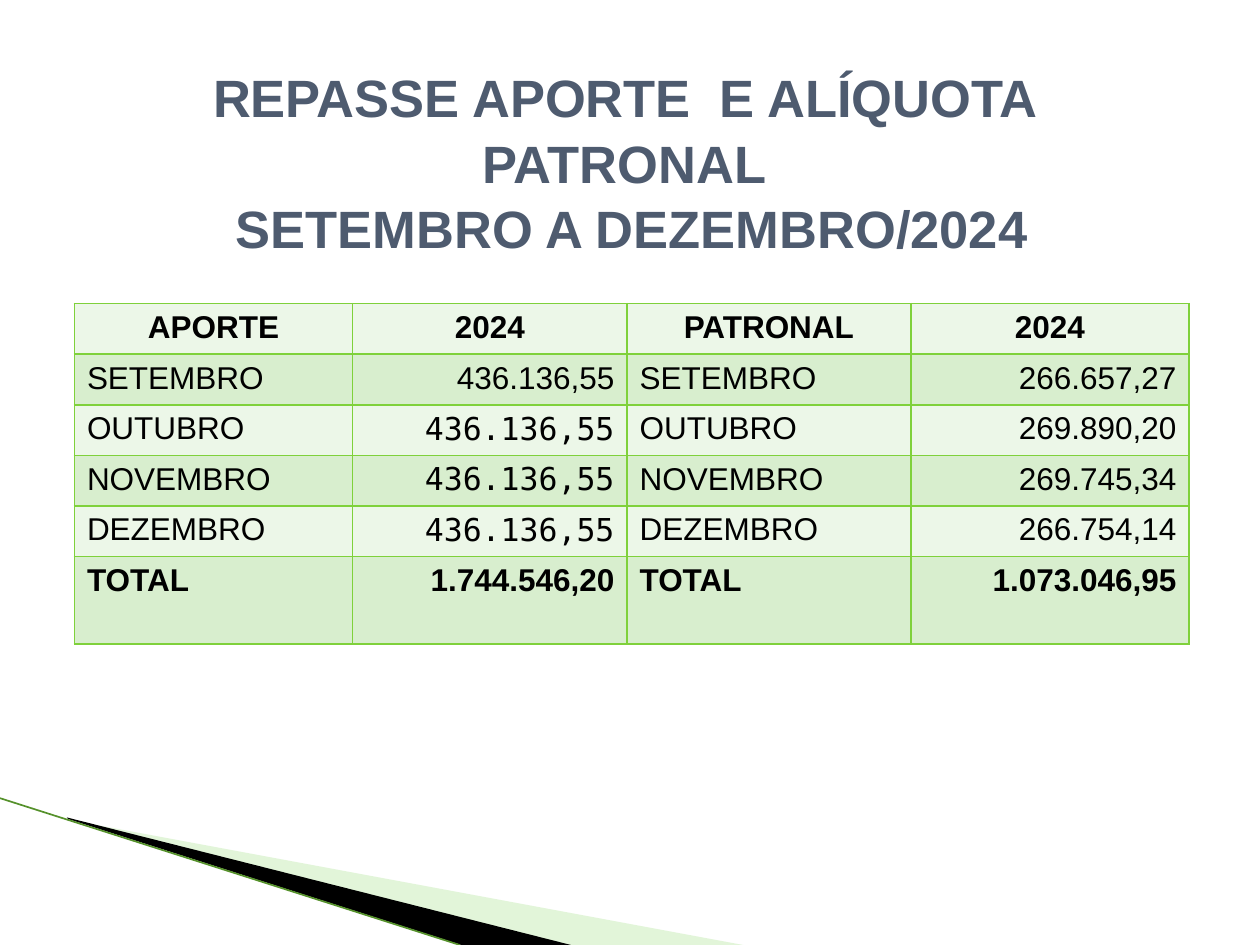
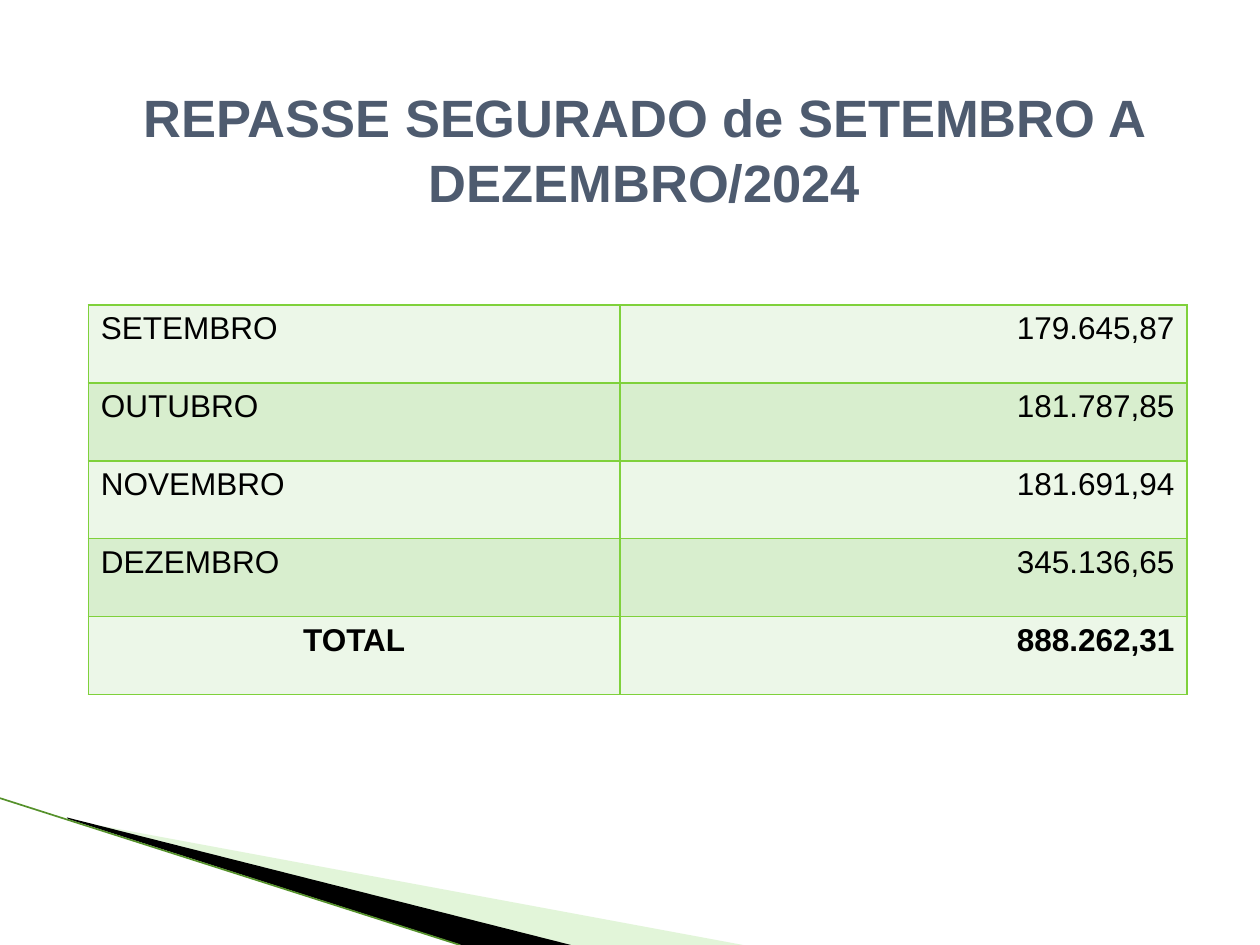
from lxml.etree import SubElement as Sub
from pptx import Presentation
from pptx.dml.color import RGBColor as RGB
from pptx.enum.shapes import MSO_CONNECTOR as Link
from pptx.enum.text import MSO_ANCHOR as Anchor, PP_ALIGN as Align
from pptx.oxml.ns import qn
from pptx.util import Cm, Pt

# Content
SLIDES = [
    dict(
        title=["REPASSE APORTE  E ALÍQUOTA PATRONAL",
               " SETEMBRO A DEZEMBRO/2024"],
        box=(2.18, 1.19, 20.83, 4.11),
        place=(1.5, 6.12),
        cols=(5.61, 5.53, 5.72, 5.61),
        heights=[1.02] * 5 + [1.76],
        rows=[
            ("APORTE", "2024", "PATRONAL", "2024"),
            ("SETEMBRO", "436.136,55", "SETEMBRO", "266.657,27"),
            ("OUTUBRO", "436.136,55", "OUTUBRO", "269.890,20"),
            ("NOVEMBRO", "436.136,55", "NOVEMBRO", "269.745,34"),
            ("DEZEMBRO", "436.136,55", "DEZEMBRO", "266.754,14"),
            ("TOTAL", "1.744.546,20", "TOTAL", "1.073.046,95"),
        ],
        centred=[(0, 0), (0, 1), (0, 2), (0, 3)],
        mono=[(2, 1), (3, 1), (4, 1)],
        bold=(0, 5),
    ),
    dict(
        title=["REPASSE SEGURADO de SETEMBRO A DEZEMBRO/2024"],
        box=(1.78, 1.57, 22.43, 2.82),
        place=(1.78, 6.15),
        cols=(10.72, 11.43),
        heights=[1.57] * 5,
        rows=[
            ("SETEMBRO", "179.645,87"),
            ("OUTUBRO", "181.787,85"),
            ("NOVEMBRO", "181.691,94"),
            ("DEZEMBRO", "345.136,65"),
            ("TOTAL", "888.262,31"),
        ],
        centred=[(4, 0)],
        mono=[],
        bold=(4,),
    ),
]

# Shared style
SANS, MONO = "Arial", "DejaVu Sans Mono"
SLATE = RGB(0x4E, 0x5B, 0x6F)
BLACK = RGB(0, 0, 0)
GREEN = RGB(0x7F, 0xD1, 0x3B)
LEAF = RGB(0xB8, 0xE7, 0xA1)
MOSS = RGB(0x55, 0x91, 0x2B)
BANDS = RGB(0xEC, 0xF7, 0xE8), RGB(0xD8, 0xEE, 0xCE)

# Corner wedges: points, colour, opacity in percent
WEDGES = [
    ([(1.4, 16.53), (14.98, 19.05), (11.48, 19.05), (1.4, 16.51)], LEAF, 40),
    ([(1.35, 16.48), (11.51, 19.05), (9.3, 19.05), (1.37, 16.51)], BLACK, 100),
]
EDGE = (0, 16.09, 9.27, 19.05)


def set_font(para, size, color, bold, name=SANS):
    font = para.font
    font.name, font.size, font.bold = name, Pt(size), bold
    font.color.rgb = color


def add_corner(slide):
    for points, color, alpha in WEDGES:
        first, *rest = [(Cm(x), Cm(y)) for x, y in points]
        path = slide.shapes.build_freeform(*first)
        path.add_line_segments(rest)
        wedge = path.convert_to_shape()
        wedge.shadow.inherit = False
        wedge.line.fill.background()
        wedge.fill.solid()
        wedge.fill.fore_color.rgb = color
        if alpha < 100:
            tint = next(wedge._element.spPr.iter(qn("a:srgbClr")))
            Sub(tint, qn("a:alpha"), val=str(alpha * 1000))
    edge = slide.shapes.add_connector(Link.STRAIGHT, *map(Cm, EDGE))
    edge.line.color.rgb = MOSS
    edge.line.width = Pt(0.95)
    Sub(edge._element.spPr, qn("a:effectLst"))


def add_title(slide, lines, box):
    frame = slide.shapes.add_textbox(*map(Cm, box)).text_frame
    frame.word_wrap = True
    frame.vertical_anchor = Anchor.MIDDLE
    frame.text = "\n".join(lines)
    for para in frame.paragraphs:
        para.alignment = Align.CENTER
        para.line_spacing = 1.04
        set_font(para, 30, SLATE, True)


def add_border(cell):
    props = cell._tc.get_or_add_tcPr()
    for side in ("lnL", "lnR", "lnT", "lnB"):
        line = Sub(props, qn("a:" + side), w=str(Pt(1)))
        Sub(Sub(line, qn("a:solidFill")), qn("a:srgbClr"), val=str(GREEN))


def add_grid(slide, data):
    rows, cols, heights = data["rows"], data["cols"], data["heights"]
    size = sum(cols), sum(heights)
    grid = slide.shapes.add_table(
        len(rows), len(cols), *map(Cm, data["place"] + size)).table
    grid.first_row = grid.horz_banding = False
    for col, width in zip(grid.columns, cols):
        col.width = Cm(width)
    for row, height in zip(grid.rows, heights):
        row.height = Cm(height)
    for r, row in enumerate(rows):
        for c, text in enumerate(row):
            cell = grid.cell(r, c)
            add_border(cell)
            cell.fill.solid()
            cell.fill.fore_color.rgb = BANDS[r % 2]
            cell.text = text
            para = cell.text_frame.paragraphs[0]
            # Names on the left, amounts on the right
            side = Align.RIGHT if c % 2 else Align.LEFT
            para.alignment = Align.CENTER if (r, c) in data["centred"] else side
            name = MONO if (r, c) in data["mono"] else SANS
            set_font(para, 18, BLACK, r in data["bold"], name)


def main():
    deck = Presentation()
    deck.slide_width, deck.slide_height = Cm(25.4), Cm(19.05)
    for data in SLIDES:
        slide = deck.slides.add_slide(deck.slide_layouts[6])
        add_corner(slide)
        add_title(slide, data["title"], data["box"])
        add_grid(slide, data)
    deck.save("out.pptx")


if __name__ == "__main__":
    main()
